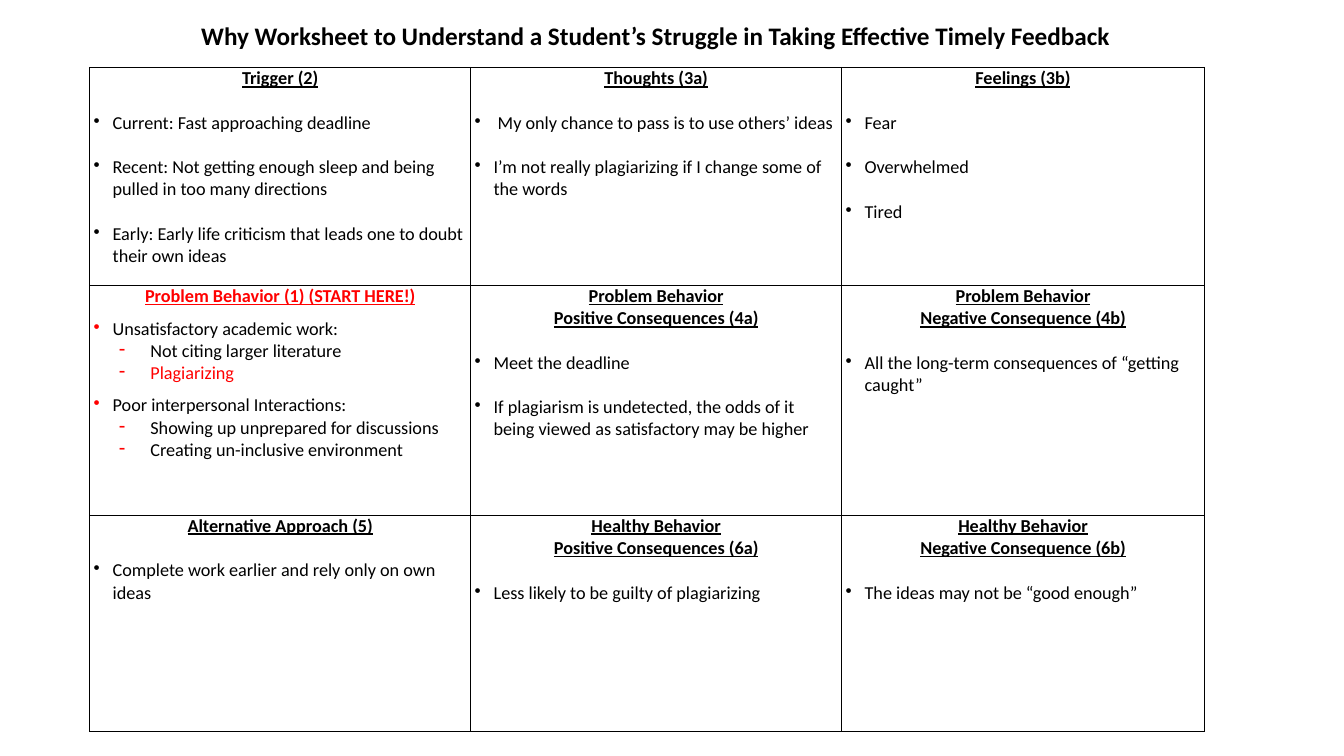
from lxml.etree import SubElement
from pptx import Presentation
from pptx.dml.color import RGBColor as RGB
from pptx.enum.text import MSO_ANCHOR as ANCHOR, MSO_AUTO_SIZE as AUTO, PP_ALIGN as ALIGN
from pptx.oxml.ns import qn
from pptx.util import Cm, Pt

COLORS = {"text": "000000", "start": "FF0000"}
COLUMNS = (9.6, 9.35, 9.14)
ROWS = (5.49, 5.79, 5.46)
WIDE, NARROW = 15.9, 7.3

# Each cell: heading lines, then list items; "-" opens a sub-item.
WORKSHEET = (
    (
        (["Trigger (2)"],
         ["Current: Fast approaching deadline",
          "Recent: Not getting enough sleep and being pulled in too many directions",
          "Early: Early life criticism that leads one to doubt their own ideas"]),
        (["Thoughts (3a)"],
         [" My only chance to pass is to use others’ ideas",
          "I’m not really plagiarizing if I change some of the words"]),
        (["Feelings (3b)"], ["Fear", "Overwhelmed", "Tired"]),
    ),
    (
        (["Problem Behavior (1) (START HERE!)"],
         ["Unsatisfactory academic work:", "-Not citing larger literature", "-Plagiarizing",
          "Poor interpersonal Interactions:", "-Showing up unprepared for discussions",
          "-Creating un-inclusive environment"]),
        (["Problem Behavior", "Positive Consequences (4a)"],
         ["Meet the deadline",
          "If plagiarism is undetected, the odds of it being viewed as satisfactory may be higher"]),
        (["Problem Behavior", "Negative Consequence (4b)"],
         ["All the long-term consequences of “getting caught”"]),
    ),
    (
        (["Alternative Approach (5)"], ["Complete work earlier and rely only on own ideas"]),
        (["Healthy Behavior", "Positive Consequences (6a)"],
         ["Less likely to be guilty of plagiarizing"]),
        (["Healthy Behavior", "Negative Consequence (6b)"],
         ["The ideas may not be “good enough”"]),
    ),
)


def assign(target, values):
    """Set every attribute named in values."""
    for name, value in values.items():
        setattr(target, name, value)


class Worksheet:
    """Holds the style and the current slide."""

    def __init__(self, prs):
        """Add a title-only slide."""
        self.s = prs.slides.add_slide(prs.slide_layouts[5])
        self.font = {"name": "Calibri", "size": Pt(13), "bold": False}

    def run(self, p, text, color="text", **font):
        """Add one formatted run to a paragraph."""
        r = p.add_run()
        r.text = text
        assign(r.font, {**self.font, **font})
        r.font.color.rgb = RGB.from_string(COLORS[color])

    def title(self, text, left, top, width, height):
        """Place and format the title."""
        sp = self.s.shapes.title
        assign(sp, {"left": Cm(left), "top": Cm(top), "width": Cm(width), "height": Cm(height)})
        tf = sp.text_frame
        assign(tf, {"word_wrap": True, "auto_size": AUTO.NONE, "vertical_anchor": ANCHOR.MIDDLE})
        p = tf.paragraphs[0]
        p.alignment = ALIGN.CENTER
        self.run(p, text, size=Pt(18), bold=True)

    def table(self, rows, left, top):
        """Add the grid and fill its cells."""
        frame = self.s.shapes.add_table(len(ROWS), len(COLUMNS), Cm(left), Cm(top),
                                        Cm(sum(COLUMNS)), Cm(sum(ROWS)))
        tbl = frame.table
        assign(tbl, {"first_row": False, "horz_banding": False})
        for column, width in zip(tbl.columns, COLUMNS):
            column.width = Cm(width)
        for row, height, contents in zip(tbl.rows, ROWS, rows):
            row.height = Cm(height)
            for cell, (heading, items) in zip(row.cells, contents):
                self.cell(cell, heading, items)

    def cell(self, cell, heading, items):
        """Write a heading and its list into a bordered cell."""
        assign(cell, {"margin_left": Cm(0.1), "margin_right": Cm(0.1),
                      "margin_top": 0, "margin_bottom": 0})
        self.borders(cell)
        cell.fill.background()
        start = "START" in heading[0]
        accent, gap = ("start", NARROW) if start else ("text", WIDE)
        tf = cell.text_frame
        for i, line in enumerate(heading):
            p = tf.add_paragraph() if i else tf.paragraphs[0]
            p.alignment = ALIGN.CENTER
            self.run(p, line, accent, bold=True, underline=True)
        for item in items:
            self.item(tf.add_paragraph(), item, accent, gap)

    def item(self, p, text, accent, gap):
        """Format a list item or sub-item."""
        sub = text.startswith("-")
        mark, margin, hang = ("-", 1.43, 0.79) if sub else ("•", 0.48, 0.48)
        assign(p, {"level": int(sub), "alignment": ALIGN.LEFT,
                   "space_before": Pt(0 if sub else gap)})
        pPr = p._p.get_or_add_pPr()
        pPr.set("marL", str(Cm(margin)))
        pPr.set("indent", str(-Cm(hang)))
        SubElement(SubElement(pPr, qn("a:buClr")), qn("a:srgbClr"), val=COLORS[accent])
        SubElement(pPr, qn("a:buChar"), char=mark)
        self.run(p, text.removeprefix("-"), "start" if text == "-Plagiarizing" else "text")

    def borders(self, cell):
        """Draw a thin line on all four sides of a cell."""
        tcPr = cell._tc.get_or_add_tcPr()
        for side in "LRTB":
            ln = SubElement(tcPr, qn("a:ln" + side), w=str(Pt(1)))
            fill = SubElement(ln, qn("a:solidFill"))
            SubElement(fill, qn("a:srgbClr"), val=COLORS["text"])


def main():
    """Build the worksheet slide."""
    prs = Presentation()
    assign(prs, {"slide_width": Cm(33.87), "slide_height": Cm(19.05)})
    sheet = Worksheet(prs)
    sheet.title("Why Worksheet to Understand a Student’s Struggle in Taking Effective Timely Feedback",
                1.9, 0.38, 29.26, 1.02)
    sheet.table(WORKSHEET, 2.26, 1.7)
    prs.save("out.pptx")


if __name__ == "__main__":
    main()
